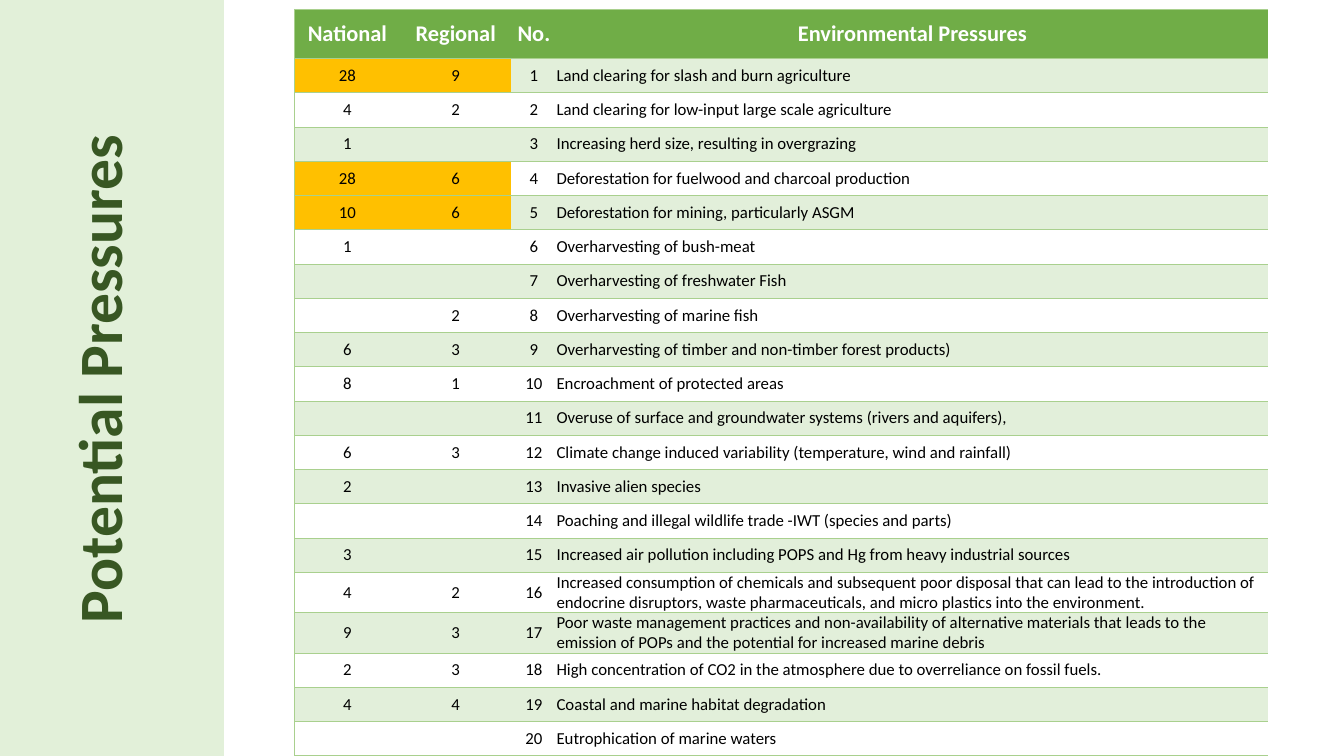
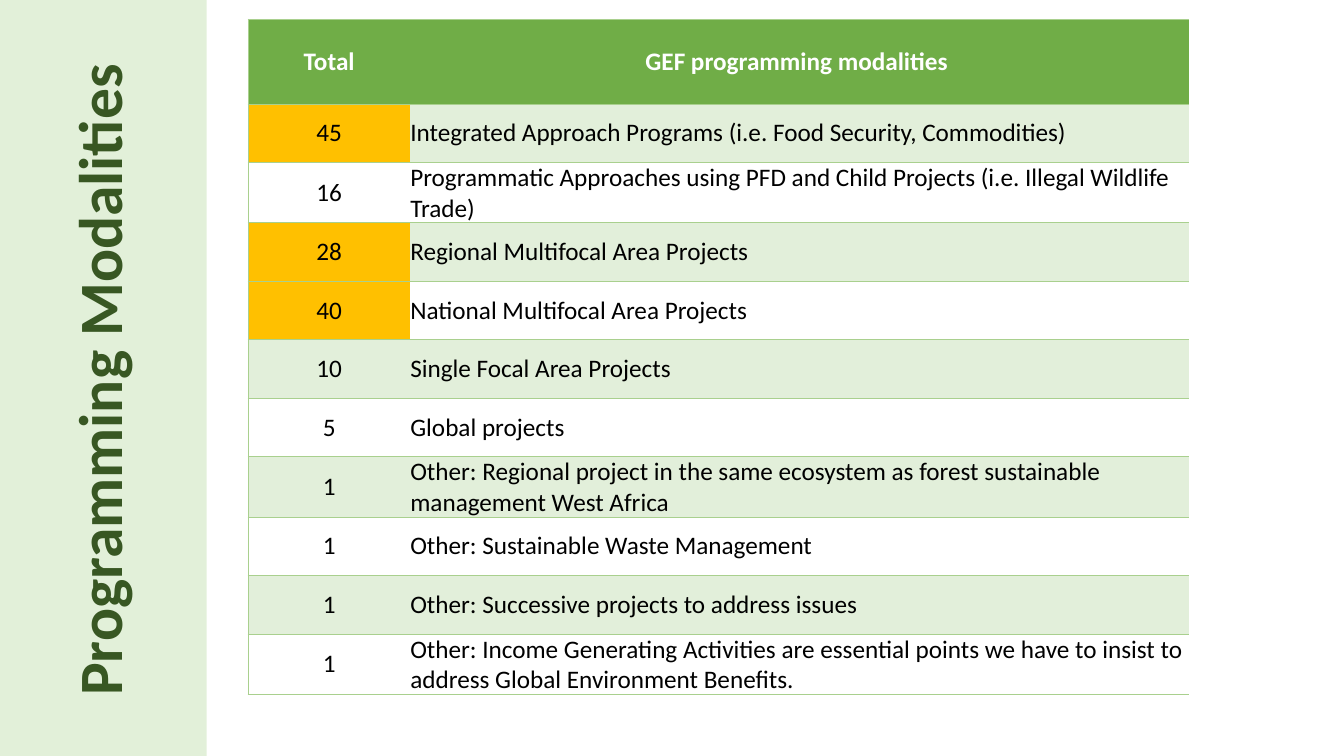
from lxml import etree
from pptx import Presentation
from pptx import util as u
from pptx.dml.color import RGBColor
from pptx.enum import shapes, text
from pptx.oxml.ns import qn

FONT = "Calibri"
COLORS = {
    "band": "E2F0D9", "title": "385723", "head": "70AD47", "white": "FFFFFF",
    "stripe": "E2EFDA", "high": "FFC000", "line": "A9D08E", "black": "000000",
}
PLAIN = "{2D5ABB26-0587-4C30-8999-92F81FD0307C}"  # table style without grid
INSETS = ("margin_left", "margin_right", "margin_top", "margin_bottom")

# National, regional, pressure
PRESSURES = [
    ("28", "9", "Land clearing for slash and burn agriculture"),
    ("4", "2", "Land clearing for low-input large scale agriculture"),
    ("1", "", "Increasing herd size, resulting in overgrazing"),
    ("28", "6", "Deforestation for fuelwood and charcoal production"),
    ("10", "6", "Deforestation for mining, particularly ASGM"),
    ("1", "", "Overharvesting of bush-meat"),
    ("", "", "Overharvesting of freshwater Fish"),
    ("", "2", "Overharvesting of marine fish"),
    ("6", "3", "Overharvesting of timber and non-timber forest products)"),
    ("8", "1", "Encroachment of protected areas"),
    ("", "", "Overuse of surface and groundwater systems (rivers and aquifers),"),
    ("6", "3", "Climate change induced variability (temperature, wind and rainfall)"),
    ("2", "", "Invasive alien species"),
    ("", "", "Poaching and illegal wildlife trade -IWT (species and parts)"),
    ("3", "", "Increased air pollution including POPS and Hg from heavy industrial sources"),
    ("4", "2", "Increased consumption of chemicals and subsequent poor disposal that can "
     "lead to the introduction of endocrine disruptors, waste pharmaceuticals, and "
     "micro plastics into the environment."),
    ("9", "3", "Poor waste management practices and non-availability of alternative "
     "materials that leads to the emission of POPs and the potential for increased "
     "marine debris"),
    ("2", "3", "High concentration of CO2 in the atmosphere due to overreliance on "
     "fossil fuels."),
    ("4", "4", "Coastal and marine habitat degradation"),
    ("", "", "Eutrophication of marine waters"),
]
MODES = [
    ("45", "Integrated Approach Programs (i.e. Food Security, Commodities)"),
    ("16", "Programmatic Approaches using PFD and Child Projects (i.e. Illegal "
     "Wildlife Trade)"),
    ("28", "Regional Multifocal Area Projects"),
    ("40", "National Multifocal Area Projects"),
    ("10", "Single Focal Area Projects"),
    ("5", "Global projects"),
    ("1", "Other: Regional project in the same ecosystem as forest sustainable "
     "management West Africa"),
    ("1", "Other: Sustainable Waste Management"),
    ("1", "Other: Successive projects to address issues"),
    ("1", "Other: Income Generating Activities are essential points we have to insist "
     "to address Global Environment Benefits."),
]


def color(name):
    return RGBColor.from_string(COLORS[name])


def box(nums):
    return [u.Inches(n) for n in nums]


def paint(item, name):
    item.fill.solid()
    item.fill.fore_color.rgb = color(name)


def write(frame, words, size, ink, bold, align):
    """Fill the first paragraph of a text frame and return it."""
    para = frame.paragraphs[0]
    para.alignment = align
    if words:
        run = para.add_run()
        run.text = words
        run.font.color.rgb = color(ink)
        for key, val in {"name": FONT, "size": u.Pt(size), "bold": bold}.items():
            setattr(run.font, key, val)
    return para


def band(slide, at):
    bar = slide.shapes.add_shape(shapes.MSO_SHAPE.RECTANGLE, *box(at))
    bar.shadow.inherit = False
    bar.line.fill.background()
    paint(bar, "band")


def title(slide, words, at):
    """Add the title, turned to read upwards along the band."""
    head = slide.shapes.add_textbox(*box(at))
    head.rotation = 270
    frame = head.text_frame
    frame.word_wrap = True
    frame.vertical_anchor = text.MSO_ANCHOR.MIDDLE
    para = write(frame, words, 44, "title", True, text.PP_ALIGN.CENTER)
    para.line_spacing = 0.9


def rule(cell, sides):
    """Draw thin lines on the named sides; call before filling the cell."""
    props = cell._tc.get_or_add_tcPr()
    for side in sides:
        line = etree.SubElement(props, qn(f"a:ln{side}"), w=str(u.Pt(0.5)))
        fill = etree.SubElement(line, qn("a:solidFill"))
        etree.SubElement(fill, qn("a:srgbClr"), val=COLORS["line"])


def shade(row, col, first, counts, least):
    """Name the fill of a cell, or None for a clear one."""
    if row == 0:
        return "head"
    if col < counts and first and int(first) >= least:
        return "high"
    return "stripe" if row % 2 else None


def grid(slide, at, widths, heights, sizes, rows, counts, least):
    """Add a table; rows whose first number reaches least have counts cells lit."""
    shape = slide.shapes.add_table(len(rows), len(widths), *box(at))
    shape._element.xpath(".//a:tableStyleId")[0].text = PLAIN
    table = shape.table
    table.horz_banding = False
    for col, width in zip(table.columns, widths):
        col.width = u.Inches(width)
    for r, words in enumerate(rows):
        top = r == 0
        table.rows[r].height = u.Inches(heights[not top])
        for c, word in enumerate(words):
            cell = table.cell(r, c)
            for side in INSETS:
                setattr(cell, side, 0)
            cell.vertical_anchor = text.MSO_ANCHOR.MIDDLE
            rule(cell, "TB" if c else "LTB")
            name = shade(r, c, words[0], counts, least)
            if name:
                paint(cell, name)
            last = c == len(words) - 1
            align = text.PP_ALIGN.LEFT if last and not top else text.PP_ALIGN.CENTER
            write(cell.text_frame, word, sizes[not top],
                  "white" if top else "black", top, align)


def page(deck, words, bar, head, **table):
    slide = deck.slides.add_slide(deck.slide_layouts[6])
    band(slide, bar)
    title(slide, words, head)
    grid(slide, **table)


def main():
    deck = Presentation()
    deck.slide_width, deck.slide_height = box((13.33, 7.5))
    listed = [(nat, reg, str(n), name)
              for n, (nat, reg, name) in enumerate(PRESSURES, 1)]
    page(deck, "Potential Pressures",
         (-0.05, -0.49, 2.27, 8.01), (-2.74, 3.26, 7.52, 1),
         at=(2.92, 0.09, 9.65, 7.43), widths=(1.05, 1.1, 0.45, 7.06),
         heights=(0.49, 0.34), sizes=(16, 12),
         rows=[("National", "Regional", "No.", "Environmental Pressures")] + listed,
         counts=2, least=10)
    page(deck, "Programming Modalities",
         (-0.22, -0.47, 2.27, 8.01), (-2.75, 3.14, 7.54, 1.26),
         at=(2.46, 0.19, 9.32, 6.7), widths=(1.61, 7.72),
         heights=(0.84, 0.58), sizes=(18, 18),
         rows=[("Total", "GEF programming modalities ")] + MODES,
         counts=1, least=28)
    deck.save("out.pptx")


if __name__ == "__main__":
    main()
